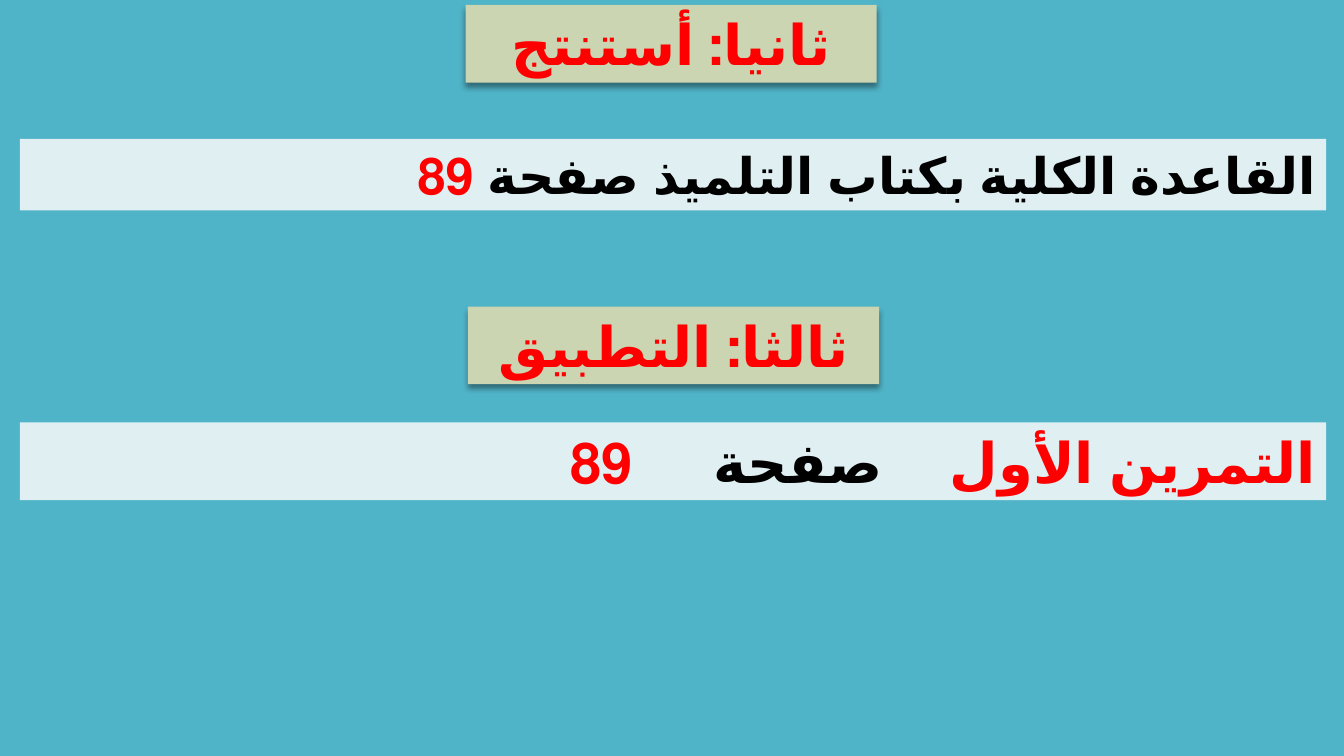
"""Build a lesson slide with two headings and two right-to-left text bars."""
import pptx
import pptx.dml.color
import pptx.enum.lang
import pptx.enum.shapes
import pptx.enum.text
import pptx.oxml
import pptx.util
from pptx.util import Pt

RGBColor = pptx.dml.color.RGBColor
PP_ALIGN = pptx.enum.text.PP_ALIGN
TEAL = RGBColor(0x50, 0xB4, 0xC8)
SAGE = RGBColor(0xCB, 0xD5, 0xB2)
PALE = RGBColor(0xE0, 0xEF, 0xF2)
RED = RGBColor(0xFF, 0x00, 0x00)
BLACK = RGBColor(0x00, 0x00, 0x00)
NS = 'xmlns:a="http://schemas.openxmlformats.org/drawingml/2006/main"'
SHADOW = (
    f'<a:effectLst {NS}><a:outerShdw blurRad="{Pt(4)}" dist="{Pt(3)}" dir="5400000" '
    'rotWithShape="0"><a:srgbClr val="000000"><a:alpha val="40000"/></a:srgbClr>'
    '</a:outerShdw></a:effectLst>'
)


def add_bar(slide, left, top, width, height, fill, size, align, runs):
    sp = slide.shapes.add_shape(
        pptx.enum.shapes.MSO_SHAPE.RECTANGLE, Pt(left), Pt(top), Pt(width), Pt(height))
    sp.shadow.inherit = False
    sp.fill.solid()
    sp.fill.fore_color.rgb = fill
    sp.line.fill.background()
    tf = sp.text_frame
    tf.word_wrap = True
    tf.vertical_anchor = pptx.enum.text.MSO_ANCHOR.TOP
    tf.auto_size = pptx.enum.text.MSO_AUTO_SIZE.SHAPE_TO_FIT_TEXT
    p = tf.paragraphs[0]
    p.alignment = align
    p.font.name = "Calibri"
    p.font.size = Pt(size)
    p.font.bold = True
    p._p.get_or_add_pPr().set("rtl", "1")
    for text, color, spacing in runs:
        r = p.add_run()
        r.text = text
        r.font.color.rgb = color
        r.font.language_id = pptx.enum.lang.MSO_LANGUAGE_ID.ARABIC_MOROCCO
        if spacing:
            r._r.get_or_add_rPr().set("spc", str(spacing * 100))
    return sp


prs = pptx.Presentation()
prs.slide_width, prs.slide_height = Pt(960), Pt(540)
s = prs.slides.add_slide(prs.slide_layouts[6])
s.background.fill.solid()
s.background.fill.fore_color.rgb = TEAL

headings = [
    (332.5, 3.5, "ثانيا: أستنتج"),
    (334.25, 219, "ثالثا: التطبيق"),
]
for left, top, text in headings:
    sp = add_bar(s, left, top, 293.75, 55.5, SAGE, 40, PP_ALIGN.CENTER, [(text, RED, 0)])
    spPr = sp._element.spPr
    spPr.remove(spPr.find(pptx.oxml.ns.qn("a:effectLst")))
    spPr.append(pptx.oxml.parse_xml(SHADOW))

bars = [
    (99.25, 51, 36, [("القاعدة الكلية بكتاب التلميذ صفحة ", BLACK, 0), ("89", RED, 0)]),
    (301.75, 55.5, 40, [
        ("التمرين الأول", RED, 0), (" ", RED, 37),
        ("صفحة", BLACK, 0), (" ", BLACK, 47), ("89", RED, 0)]),
]
for top, height, size, runs in bars:
    add_bar(s, 14.25, top, 933, height, PALE, size, PP_ALIGN.RIGHT, runs)

prs.save("out.pptx")
